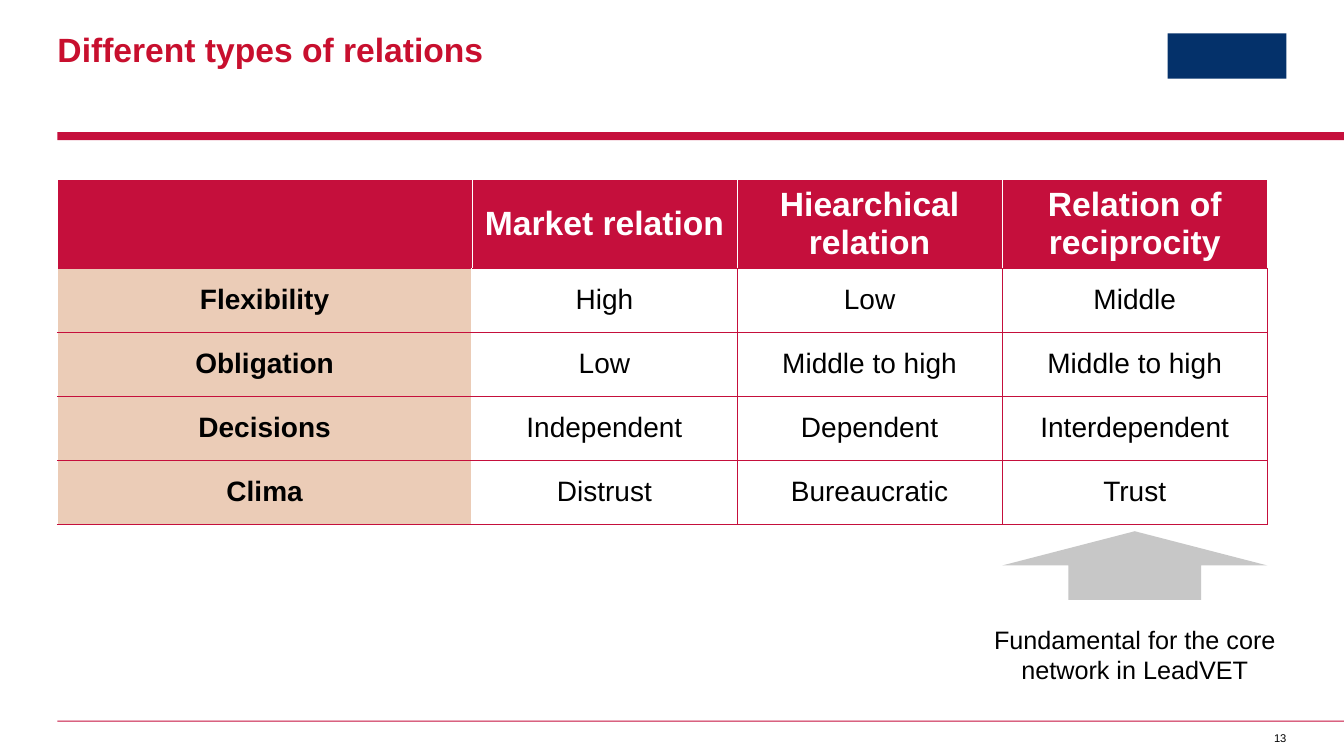
from lxml.etree import SubElement
from pptx import Presentation
from pptx.dml.color import RGBColor
from pptx.enum.shapes import MSO_SHAPE
from pptx.enum.text import MSO_ANCHOR, PP_ALIGN
from pptx.oxml.ns import qn
from pptx.util import Inches, Pt

COLORS = {"red": "C50F3C", "title": "C80F2E", "navy": "04316A", "sand": "EBCCB7",
          "grey": "C7C7C7", "white": "FFFFFF", "black": "000000"}
WIDTH, HEIGHT = 13.33, 7.5
MARGIN = 0.57
LABEL_COL, VALUE_COL = 4.11, 2.63
HEAD_ROW, BODY_ROW = 0.84, 0.635
ROWS = [
    ["", "Market relation", "Hiearchical relation", "Relation of reciprocity"],
    ["Flexibility", "High", "Low", "Middle"],
    ["Obligation", "Low", "Middle to high", "Middle to high"],
    ["Decisions", "Independent", "Dependent", "Interdependent"],
    ["Clima", "Distrust", "Bureaucratic", "Trust"],
]


def rgb(name):
    """Return the named colour."""
    return RGBColor.from_string(COLORS[name])


def write(tf, text, size=18, color="black", bold=False, align=PP_ALIGN.CENTER, spacing=None):
    """Write one formatted paragraph into a text frame."""
    p = tf.paragraphs[0]
    p.alignment = align
    if spacing:
        p.line_spacing = spacing
    p.font.size = Pt(size)
    if text:
        r = p.add_run()
        r.text = text
        r.font.name, r.font.size, r.font.bold = "Arial", Pt(size), bold
        r.font.color.rgb = rgb(color)


def add_text(s, box, text, inset=(0, 0), wrap=True, **fmt):
    """Add a text box with horizontal and vertical insets."""
    tf = s.shapes.add_textbox(*map(Inches, box)).text_frame
    tf.word_wrap = wrap
    tf.margin_left = tf.margin_right = Inches(inset[0])
    tf.margin_top = tf.margin_bottom = Inches(inset[1])
    write(tf, text, **fmt)


def add_block(s, box, color, kind=MSO_SHAPE.RECTANGLE):
    """Add a filled shape without outline."""
    sp = s.shapes.add_shape(kind, *map(Inches, box))
    sp.shadow.inherit = False
    sp.fill.solid()
    sp.fill.fore_color.rgb = rgb(color)
    sp.line.fill.background()


def add_borders(cell, **sides):
    """Set the cell borders, given in the order L, R, T, B."""
    tc_pr = cell._tc.get_or_add_tcPr()
    for i, (side, (color, width)) in enumerate(sides.items()):
        ln = SubElement(tc_pr, qn(f"a:ln{side}"), w=str(Pt(width)))
        fill = SubElement(ln, qn("a:solidFill"))
        SubElement(fill, qn("a:srgbClr"), val=COLORS[color])
        tc_pr.insert(i, ln)


def vertical_edge(row, edge):
    """Return the line at a vertical edge, counted from the left."""
    if row == 0:
        return "white", 0.5
    return ("white", 1) if edge < 2 else ("red", 0.25)


def add_frame(s, box):
    """Add the title, emblem, rules and page number."""
    x, y, w, h = box
    right = x + w - MARGIN
    for top, thick in ((1.31, 0.08), (7.15, 0.01)):
        add_block(s, (x + MARGIN, y + top, w - MARGIN, thick), "red")
    add_block(s, (right - 1.18, y + 0.33, 1.18, 0.45), "navy")
    add_text(s, (right - 0.21, y + 7.26, 0.21, 0.13), "13", wrap=False,
             size=8, align=PP_ALIGN.RIGHT)
    add_text(s, (x + MARGIN, y + 0.33, 7.49, 0.36), "Different types of relations",
             size=24, color="title", bold=True, align=PP_ALIGN.LEFT, spacing=0.9)


def add_relations(s, box):
    """Add the table comparing the relations."""
    table = s.shapes.add_table(len(ROWS), len(ROWS[0]), *map(Inches, box)).table
    table.first_row = table.horz_banding = False
    for j, col in enumerate(table.columns):
        col.width = Inches(VALUE_COL if j else LABEL_COL)
    for i, row in enumerate(table.rows):
        row.height = Inches(BODY_ROW if i else HEAD_ROW)
        for j, text in enumerate(ROWS[i]):
            cell = table.cell(i, j)
            cell.vertical_anchor = MSO_ANCHOR.MIDDLE
            cell.margin_left = cell.margin_right = Inches(0.12)
            cell.margin_top = cell.margin_bottom = Inches(0.04)
            cell.fill.solid()
            cell.fill.fore_color.rgb = rgb("red" if i == 0 else "white" if j else "sand")
            add_borders(cell, L=vertical_edge(i, j), R=vertical_edge(i, j + 1),
                        T=("red", 0.25) if i else ("white", 1), B=("red", 0.25))
            write(cell.text_frame, text, size=20 if i else 24,
                  color="black" if i else "white", bold=i == 0 or j == 0)


def add_remark(s, box):
    """Add the arrow and the remark below it."""
    x, y, w, h = box
    add_block(s, (x, y, w, 0.68), "grey", MSO_SHAPE.UP_ARROW)
    add_text(s, (x - 0.26, y + 0.87, w + 0.52, h - 0.87),
             "Fundamental for the core network in LeadVET", inset=(0.1, 0.05))


def main():
    """Build and save the slide."""
    prs = Presentation()
    prs.slide_width, prs.slide_height = Inches(WIDTH), Inches(HEIGHT)
    s = prs.slides.add_slide(prs.slide_layouts[6])
    table_w = LABEL_COL + 3 * VALUE_COL
    add_frame(s, (0, 0, WIDTH, HEIGHT))
    add_relations(s, (MARGIN, 1.78, table_w, HEAD_ROW + 4 * BODY_ROW))
    add_remark(s, (MARGIN + table_w - VALUE_COL, 5.27, VALUE_COL, 1.58))
    prs.save("out.pptx")


if __name__ == "__main__":
    main()
